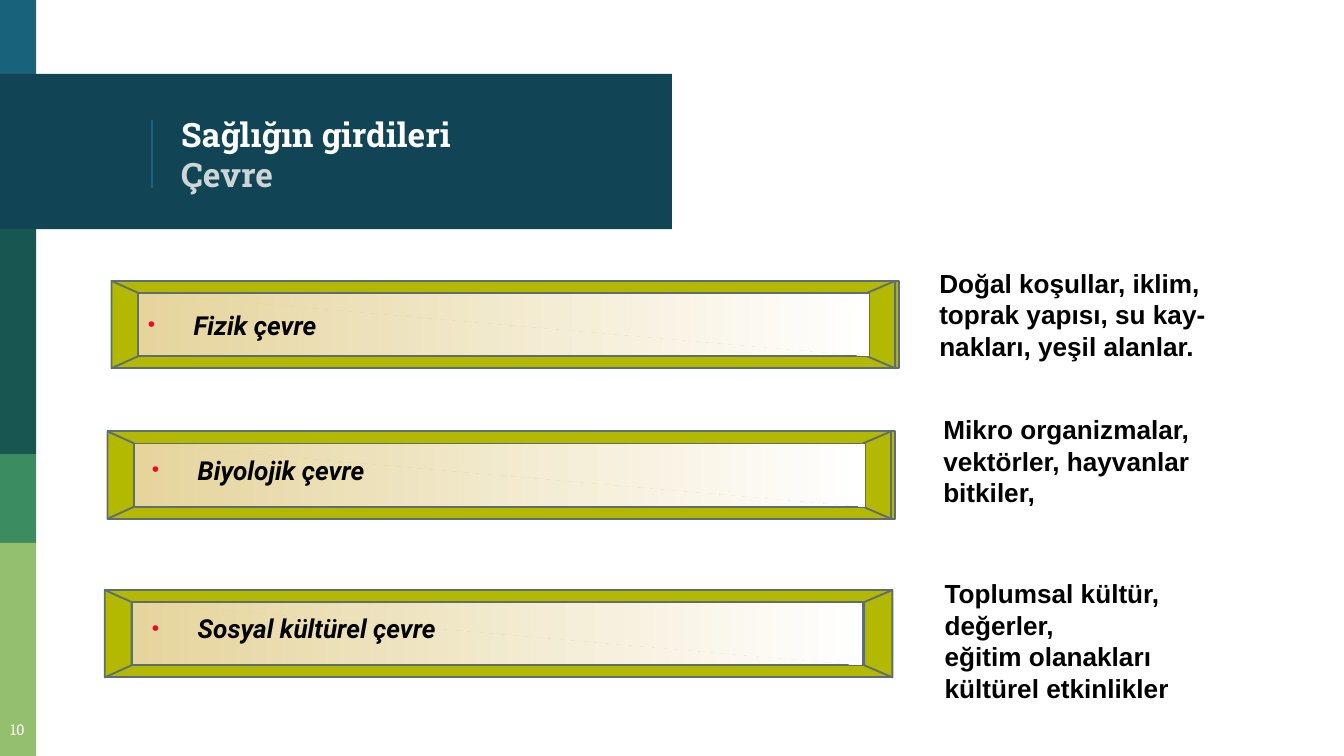
from dataclasses import dataclass

from lxml import etree
from pptx import Presentation
from pptx.dml.color import RGBColor
from pptx.enum.shapes import MSO_CONNECTOR, MSO_SHAPE
from pptx.enum.text import MSO_ANCHOR, MSO_AUTO_SIZE, PP_ALIGN
from pptx.oxml.ns import qn
from pptx.util import Inches, Pt

RECTANGLE = MSO_SHAPE.RECTANGLE
STRAIGHT = MSO_CONNECTOR.STRAIGHT
MIDDLE, TOP = MSO_ANCHOR.MIDDLE, MSO_ANCHOR.TOP
LEFT, CENTER = PP_ALIGN.LEFT, PP_ALIGN.CENTER
GROW = MSO_AUTO_SIZE.SHAPE_TO_FIT_TEXT

WHITE = RGBColor(0xFF, 0xFF, 0xFF)
BLACK = RGBColor(0, 0, 0)
BLUE = RGBColor(0x18, 0x63, 0x7B)
NAVY = RGBColor(0x11, 0x44, 0x54)
TEAL = RGBColor(0x16, 0x57, 0x51)
GREEN = RGBColor(0x3B, 0x8D, 0x61)
LIME = RGBColor(0x94, 0xBF, 0x6E)
PALE = RGBColor(0xCE, 0xD5, 0xD8)
OLIVE = RGBColor(0xB3, 0xB9, 0x00)
SLATE = RGBColor(0x5F, 0x6C, 0x70)
SAND = RGBColor(0xE5, 0xD4, 0x9C)
RED = RGBColor(0xFC, 0x01, 0x28)

COLUMNS = 1000
ROWS = COLUMNS * 9 / 16
CELL = Inches(0.01)


@dataclass
class Box:
    """A rectangle counted in columns and rows of the slide grid."""
    left: float
    top: float
    width: float
    height: float

    def lengths(self):
        """Return the rectangle as slide lengths."""
        return [int(CELL * n) for n in (self.left, self.top, self.width, self.height)]


def add_block(page, box, color):
    """Place a plain filled rectangle."""
    block = page.shapes.add_shape(RECTANGLE, *box.lengths())
    block.shadow.inherit = False
    block.fill.solid()
    block.fill.fore_color.rgb = color
    block.line.fill.background()
    return block


def write(shape, text, font, size, color, bold=False, italic=False,
          align=LEFT, anchor=TOP, margins=(0.1, 0.1), wrap=True):
    """Fill a shape with evenly formatted text."""
    frame = shape.text_frame
    frame.text = text
    frame.word_wrap = wrap
    frame.vertical_anchor = anchor
    frame.margin_left = frame.margin_right = Inches(margins[0])
    frame.margin_top = frame.margin_bottom = Inches(margins[1])
    if not wrap:
        frame.auto_size = GROW
    for para in frame.paragraphs:
        para.alignment = align
        for span in para.runs:
            span.font.name, span.font.size = font, Pt(size)
            span.font.bold, span.font.italic = bold, italic
            span.font.color.rgb = color
    return frame


def add_sidebar(page, box):
    """Stack the coloured bands and the page number down the left edge."""
    edges = (0, 58, 170, 338, 404, box.height)
    for color, top, bottom in zip((BLUE, NAVY, TEAL, GREEN, LIME), edges, edges[1:]):
        add_block(page, Box(box.left, box.top + top, box.width, bottom - top), color)
    number = page.shapes.add_textbox(*Box(box.left - 6, box.height - 33, 38, 33).lengths())
    write(number, "10", "Roboto Slab", 8, WHITE, align=CENTER)


def add_header(page, box):
    """Place the title band with its thin divider and two-line title."""
    add_block(page, box, NAVY)
    x, y = box.left + 113, box.top + 34
    divider = page.shapes.add_connector(
        STRAIGHT, *[CELL * n for n in (x, y, x, y + 51)])
    divider.line.color.rgb = BLUE
    divider.line.width = Pt(0.75)
    etree.SubElement(divider._element.spPr, qn("a:effectLst"))
    title = page.shapes.add_textbox(*Box(box.left + 125, box.top + 3, 351, 113).lengths())
    frame = write(title, "Sağlığın girdileri\vÇevre", "Roboto Slab", 18, WHITE,
                  bold=True, anchor=MIDDLE)
    frame.paragraphs[0].runs[1].font.color.rgb = PALE


def add_facet(page, box, points, gradient=False, close=True):
    """Draw one outlined face of a bevelled panel."""
    placed = [(box.left + x, box.top + y) for x, y in points]
    builder = page.shapes.build_freeform(*placed[0], scale=CELL)
    builder.add_line_segments(placed[1:], close=close)
    facet = builder.convert_to_shape()
    facet.shadow.inherit = False
    if gradient:
        facet.fill.gradient()
        facet.fill.gradient_angle = 0
        for stop, color in zip(facet.fill.gradient_stops, (SAND, WHITE)):
            stop.color.rgb = color
    else:
        facet.fill.solid()
        facet.fill.fore_color.rgb = OLIVE
    facet.line.color.rgb = SLATE
    facet.line.width = Pt(1)


def add_bullet(para):
    """Give a paragraph a small red bullet with a hanging indent."""
    para.space_before = Pt(2.8)
    properties = para._p.get_or_add_pPr()
    properties.set("marL", str(Inches(0.34)))
    properties.set("indent", str(-Inches(0.34)))
    color = etree.SubElement(properties, qn("a:buClr"))
    etree.SubElement(color, qn("a:srgbClr"), val=str(RED))
    etree.SubElement(properties, qn("a:buSzPct"), val="80000")
    etree.SubElement(properties, qn("a:buFont"), typeface="Arial")
    etree.SubElement(properties, qn("a:buChar"), char="•")


def add_panel(page, box, bevel_right, label_box, label):
    """Build a bevelled panel with its bulleted label."""
    w, h = box.width, box.height
    rim, side = 9, 20
    low = h - rim
    face = w - side - 1
    add_facet(page, box, [(0, 0), (0, h), (w, h), (w, 0)])
    add_facet(page, box, [(0, h), (side, low), (side, rim), (0, 0)])
    add_facet(page, box, [(side, rim), (side, low), (face, low), (face, rim)], gradient=True)
    add_facet(page, box, [(bevel_right, h), (bevel_right - 21, low),
                          (bevel_right - 21, rim), (bevel_right, 0)])
    add_facet(page, box, [(side + 1, rim), (face - 1, rim), (face - 1, low)],
              gradient=True, close=False)
    text = page.shapes.add_textbox(*label_box.lengths())
    frame = write(text, label, "Roboto", 14, BLACK, bold=True, italic=True,
                  margins=(0.09, 0.05), wrap=False)
    add_bullet(frame.paragraphs[0])


def add_note(page, box, text):
    """Place an explanation on a half-transparent white ground."""
    note = add_block(page, box, WHITE)
    color = note._element.spPr.find(qn("a:solidFill"))[0]
    etree.SubElement(color, qn("a:alpha"), val="50000")
    write(note, text, "Arial", 14, BLACK, bold=True, margins=(0.1, 0.05), wrap=False)


def main():
    """Build and save the slide."""
    deck = Presentation()
    deck.slide_width, deck.slide_height = CELL * COLUMNS, int(CELL * ROWS)
    page = deck.slides.add_slide(deck.slide_layouts[6])
    add_sidebar(page, Box(0, 0, 27, ROWS))
    add_header(page, Box(0, 55, 500, 115.5))
    panels = (
        (83, 209, 583, Box(101, 225, 188, 40), "Fizik çevre"),
        (80, 321, 583, Box(104, 333, 240, 40), "Biyolojik çevre"),
        (78, 439, 586, Box(104, 451, 318, 40), "Sosyal kültürel çevre"),
    )
    for left, top, bevel_right, label_box, label in panels:
        add_panel(page, Box(left, top, 586, 65), bevel_right, label_box, label)
    notes = (
        (Box(689, 194, 265, 101),
         "Doğal koşullar, iklim,\ntoprak yapısı, su kay-\nnakları, yeşil alanlar."),
        (Box(692, 303, 262, 101),
         "Mikro organizmalar,\nvektörler, hayvanlar\nbitkiler,"),
        (Box(693, 425, 238, 131),
         "Toplumsal kültür,\ndeğerler,\neğitim olanakları\nkültürel etkinlikler"),
    )
    for box, text in notes:
        add_note(page, box, text)
    deck.save("out.pptx")


if __name__ == "__main__":
    main()
